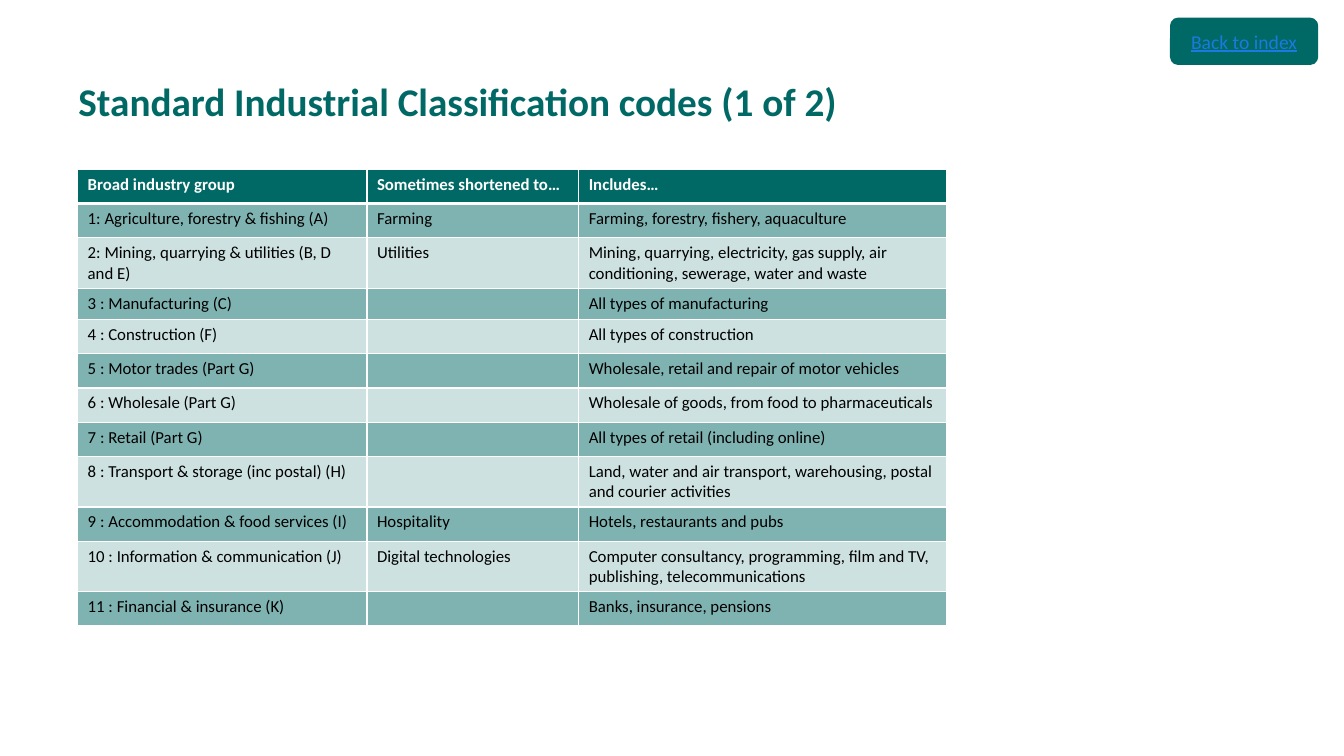
from pptx import Presentation
from pptx.dml.color import RGBColor
from pptx.enum.shapes import MSO_SHAPE
from pptx.enum.text import MSO_ANCHOR, PP_ALIGN
from pptx.oxml import parse_xml
from pptx.oxml.ns import nsdecls
from pptx.util import Inches, Pt

MIDDLE = MSO_ANCHOR.MIDDLE
LEFT, CENTER = PP_ALIGN.LEFT, PP_ALIGN.CENTER
ROUNDED = MSO_SHAPE.ROUNDED_RECTANGLE

THEME = dict(font="Calibri", teal="006965", white="FFFFFF", black="000000",
             link="1A7AE0", title=28, button=14, body=12)
DARK_BAND, LIGHT_BAND = 50, 20  # opacity in percent
THIN, THICK = 1, 3  # border widths in points
ROW_H, TIGHT_ROW_H = 0.34, 0.31
COL_W = [2.87, 2.1, 3.65]

ROWS = [
    ("Broad industry group", "Sometimes shortened to…", "Includes…"),
    ("1: Agriculture, forestry & fishing (A)", "Farming",
     "Farming, forestry, fishery, aquaculture"),
    ("2: Mining, quarrying & utilities (B, D and E)", "Utilities",
     "Mining, quarrying, electricity, gas supply, air conditioning, sewerage, water and waste"),
    ("3 : Manufacturing (C)", "", "All types of manufacturing"),
    ("4 : Construction (F)", "", "All types of construction"),
    ("5 : Motor trades (Part G)", "", "Wholesale, retail and repair of motor vehicles"),
    ("6 : Wholesale (Part G)", "", "Wholesale of goods, from food to pharmaceuticals"),
    ("7 : Retail (Part G)", "", "All types of retail (including online)"),
    ("8 : Transport & storage (inc postal) (H)", "",
     "Land, water and air transport, warehousing, postal and courier activities"),
    ("9 : Accommodation & food services (I)", "Hospitality", "Hotels, restaurants and pubs"),
    ("10 : Information & communication (J)", "Digital technologies",
     "Computer consultancy, programming, film and TV, publishing, telecommunications"),
    ("11 : Financial & insurance (K)", "", "Banks, insurance, pensions"),
]
TIGHT_ROW = 3


def write(tf, text, size, color, bold=False, underline=False, align=LEFT, spacing=None):
    tf.word_wrap = True
    p = tf.paragraphs[0]
    p.alignment = align
    p.line_spacing = spacing
    if not text:  # an empty cell keeps the body size, so its row stays low
        p._p.append(parse_xml(f'<a:endParaRPr {nsdecls("a")} sz="{size * 100}"/>'))
        return
    r = p.add_run()
    r.text = text
    r.font.name = THEME["font"]
    r.font.size = Pt(size)
    r.font.bold = bold
    r.font.underline = underline
    r.font.color.rgb = RGBColor.from_string(color)


def style_cell(cell, opacity, top, bottom):
    """Give a cell its teal fill, in percent of opacity, and white borders."""
    cell.fill.solid()
    cell.fill.fore_color.rgb = RGBColor.from_string(THEME["teal"])
    tcPr = cell._tc.tcPr
    if opacity < 100:
        tcPr.find(".//{*}srgbClr").append(
            parse_xml(f'<a:alpha {nsdecls("a")} val="{opacity * 1000}"/>'))
    for i, (side, width) in enumerate(zip("LRTB", (THIN, THIN, top, bottom))):
        tcPr.insert(i, parse_xml(
            f'<a:ln{side} {nsdecls("a")} w="{Pt(width)}"><a:solidFill>'
            f'<a:srgbClr val="{THEME["white"]}"/></a:solidFill></a:ln{side}>'))


prs = Presentation()
prs.slide_width, prs.slide_height = Inches(13.33), Inches(7.5)
s = prs.slides.add_slide(prs.slide_layouts[6])

title = s.shapes.add_textbox(Inches(0.68), Inches(0.52), Inches(10.52), Inches(1.02))
title.text_frame.vertical_anchor = MIDDLE
write(title.text_frame, "Standard Industrial Classification codes (1 of 2)",
      THEME["title"], THEME["teal"], bold=True, spacing=0.9)

table = s.shapes.add_table(len(ROWS), len(COL_W), Inches(0.77), Inches(1.68),
                           Inches(sum(COL_W)), Inches(ROW_H * len(ROWS))).table
table.horz_banding = False
for column, width in zip(table.columns, COL_W):
    column.width = Inches(width)
for i, texts in enumerate(ROWS):
    header = i == 0
    table.rows[i].height = Inches(TIGHT_ROW_H if i == TIGHT_ROW else ROW_H)
    opacity = 100 if header else DARK_BAND if i % 2 else LIGHT_BAND
    for j, text in enumerate(texts):
        cell = table.cell(i, j)
        style_cell(cell, opacity, THICK if i == 1 else THIN, THICK if header else THIN)
        write(cell.text_frame, text, THEME["body"],
              THEME["white" if header else "black"], bold=header)

button = s.shapes.add_shape(ROUNDED, Inches(11.61), Inches(0.18), Inches(1.46), Inches(0.46))
button.shadow.inherit = False
button.fill.solid()
button.fill.fore_color.rgb = RGBColor.from_string(THEME["teal"])
button.line.color.rgb = RGBColor.from_string(THEME["teal"])
button.text_frame.vertical_anchor = MIDDLE
write(button.text_frame, "Back to index", THEME["button"], THEME["link"],
      underline=True, align=CENTER)

prs.save("out.pptx")
